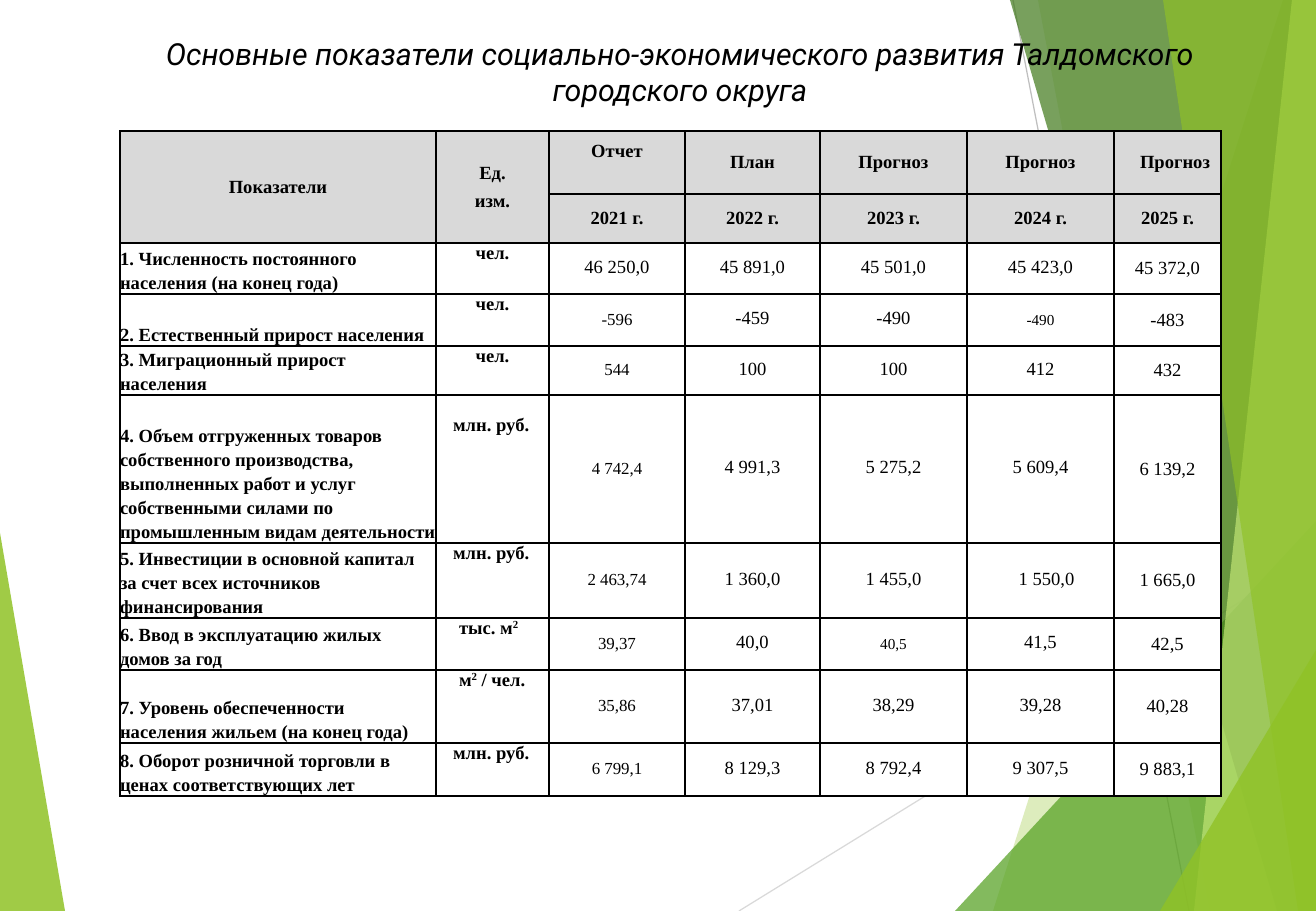
from lxml import etree
from pptx import Presentation
from pptx import util as u
from pptx.dml.color import RGBColor
from pptx.enum import shapes, text
from pptx.oxml.ns import qn

PX = 914400 / 121.5  # EMU in one pixel


def px(length):
    return u.Emu(round(length * PX))


def rgb(value):
    return RGBColor.from_string(value)


deck = Presentation()
deck.slide_width, deck.slide_height = px(1316), px(911)
page = deck.slides.add_slide(deck.slide_layouts[6])

# Background facets: colour, opacity in percent, corner points
left_facet = ("90C226", 85, [(0, 533), (65, 911), (0, 911)])
right_facets = [
    ("90C226", 30, [(1283, 0), (993, 911), (1316, 911), (1316, 0)]),
    ("90C226", 20, [(1038, 0), (1210, 911), (1316, 911), (1316, 0)]),
    ("54A021", 72, [(955, 911), (1316, 521), (1316, 911)]),
    ("3F7819", 70, [(1010, 0), (1277, 911), (1316, 911), (1316, 0)]),
    ("C0E474", 70, [(1292, 0), (1194, 911), (1316, 911), (1316, 0)]),
    ("90C226", 65, [(1163, 0), (1298, 911), (1316, 911), (1316, 0)]),
    ("90C226", 80, [(1160, 911), (1316, 650), (1316, 911)]),
]
for color, opacity, points in [left_facet] + right_facets:
    builder = page.shapes.build_freeform(*points[0], scale=PX)
    builder.add_line_segments(points[1:], close=True)
    facet = builder.convert_to_shape()
    facet.shadow.inherit = False
    facet.line.fill.background()
    facet.fill.solid()
    facet.fill.fore_color.rgb = rgb(color)
    tint = facet.fill._xPr.find(".//" + qn("a:srgbClr"))
    etree.SubElement(tint, qn("a:alpha"), val=str(opacity * 1000))

# Thin background lines, placed behind the right-hand facets
for order, (color, ends) in enumerate([("D9D9D9", (739, 911, 1316, 555)),
                                       ("BFBFBF", (1013, 0, 1189, 911))]):
    line = page.shapes.add_connector(
        shapes.MSO_CONNECTOR.STRAIGHT, *[px(end) for end in ends])
    line.line.color.rgb = rgb(color)
    line.line.width = u.Pt(0.75)
    etree.SubElement(line._element.spPr, qn("a:effectLst"))
    page.shapes._spTree.insert(3 + order, line._element)

# Table content
header = ["Показатели", "Ед.\nизм.", "Отчет", "План", "Прогноз", "Прогноз", "Прогноз"]
years = ["", "", "2021 г.", "2022 г.", "2023 г.", "2024 г.", "2025 г."]
# Superscripts stand between ^ signs
indicators = [
    ["1. Численность постоянного населения (на конец года)", "чел.",
     "46 250,0", "45 891,0", "45 501,0", "45 423,0", "45 372,0"],
    ["2. Естественный прирост населения", "чел.", "-596", "-459", "-490", "-490", "-483"],
    ["3. Миграционный прирост населения", "чел.", "544", "100", "100", "412", "432"],
    ["4. Объем отгруженных товаров собственного производства, выполненных работ и услуг "
     "собственными силами по промышленным видам деятельности", "млн. руб.",
     "4 742,4", "4 991,3", "5 275,2", "5 609,4", "6 139,2"],
    ["5. Инвестиции в основной капитал за счет всех источников финансирования", "млн. руб.",
     "2 463,74", "1 360,0", "1 455,0", "1 550,0", "1 665,0"],
    ["6. Ввод в эксплуатацию жилых домов за год", "тыс. м^2^",
     "39,37", "40,0", "40,5", "41,5", "42,5"],
    ["7. Уровень обеспеченности населения жильем (на конец года)", "м^2^ / чел.",
     "35,86", "37,01", "38,29", "39,28", "40,28"],
    ["8. Оборот розничной торговли в ценах соответствующих лет", "млн. руб.",
     "6 799,1", "8 129,3", "8 792,4", "9 307,5", "9 883,1"],
]
rows = [header, years] + indicators
widths = [316, 113, 136, 135, 147, 147, 107]
heights = [63, 49, 51, 52, 49, 148, 75, 52, 73, 53]
unit_indents = {"млн. руб.": 17, "тыс. м^2^": 23, "м^2^ / чел.": 23}
cell_indents = {(0, 6): 26, (6, 5): 12}
small_cells = {(3, 5): 9, (7, 4): 9}
small_cells.update({(row, 2): 10 for row in range(3, 10)})

# Table grid
frame = page.shapes.add_table(len(rows), len(widths), px(120), px(131),
                              px(sum(widths)), px(sum(heights)))
table = frame.table
table.first_row = table.horz_banding = False
for column, width in zip(table.columns, widths):
    column.width = px(width)
for line, height in zip(table.rows, heights):
    line.height = px(height)
for column in (0, 1):
    table.cell(0, column).merge(table.cell(1, column))

for row, values in enumerate(rows):
    for column, value in enumerate(values):
        cell = table.cell(row, column)
        is_header = row < 2
        is_value = not is_header and column > 1

        # Borders, fill and margins
        properties = cell._tc.get_or_add_tcPr()
        for side in ("lnL", "lnR", "lnT", "lnB"):
            border = etree.SubElement(properties, qn("a:" + side), w="12700")
            solid = etree.SubElement(border, qn("a:solidFill"))
            etree.SubElement(solid, qn("a:srgbClr"), val="000000")
        cell.fill.solid()
        cell.fill.fore_color.rgb = rgb("D9D9D9" if is_header else "FFFFFF")
        cell.margin_left = cell.margin_right = px(1 if is_value else 0)
        cell.margin_top = px(20 if (row, column) == (5, 1) else 0)
        cell.margin_bottom = px(22 if (row, column) == (0, 2) else 0)
        cell.vertical_anchor = text.MSO_ANCHOR.MIDDLE
        if not is_header and column < 2:
            cell.vertical_anchor = (text.MSO_ANCHOR.BOTTOM, text.MSO_ANCHOR.TOP)[column]
        if cell.is_spanned:
            continue

        # Text
        indent = unit_indents.get(value, cell_indents.get((row, column), 0))
        flush_left = (column == 0 and not is_header) or value in unit_indents or (row, column) == (0, 6)
        cell.text_frame.text = value.replace("^", "")
        for para in cell.text_frame.paragraphs:
            para.alignment = text.PP_ALIGN.LEFT if flush_left else text.PP_ALIGN.CENTER
            if indent:
                para._p.get_or_add_pPr().set("marL", str(px(indent)))
            if column == 0 and not is_header:
                para.line_spacing = u.Pt(14.2 if row in (5, 6, 8) else 14.4)
            elif is_value and column < 6:
                para.line_spacing = u.Pt(10.5)
                para.space_before = u.Pt(6)
            if "^" in value:
                para.clear()
                for part, piece in enumerate(value.split("^")):
                    if piece:
                        span = para.add_run()
                        span.text = piece
                        if part == 1:
                            span.font._element.set("baseline", "30000")
            for span in para.runs:
                span.font.name = "Times New Roman"
                span.font.size = u.Pt(small_cells.get((row, column), 11))
                span.font.bold = not is_value
                span.font.color.rgb = rgb("000000")
table.cell(0, 1).text_frame.paragraphs[0].space_after = u.Pt(4.2)

# Title
box = page.shapes.add_textbox(px(120), px(29), px(1120), px(86))
box.text_frame.word_wrap = True
para = box.text_frame.paragraphs[0]
para.text = "Основные показатели социально-экономического развития Талдомского городского округа"
para.alignment = text.PP_ALIGN.CENTER
span = para.runs[0]
span.font.name = "Roboto"
span.font.size = u.Pt(18)
span.font.italic = True
span.font.color.rgb = rgb("000000")

deck.save("out.pptx")
